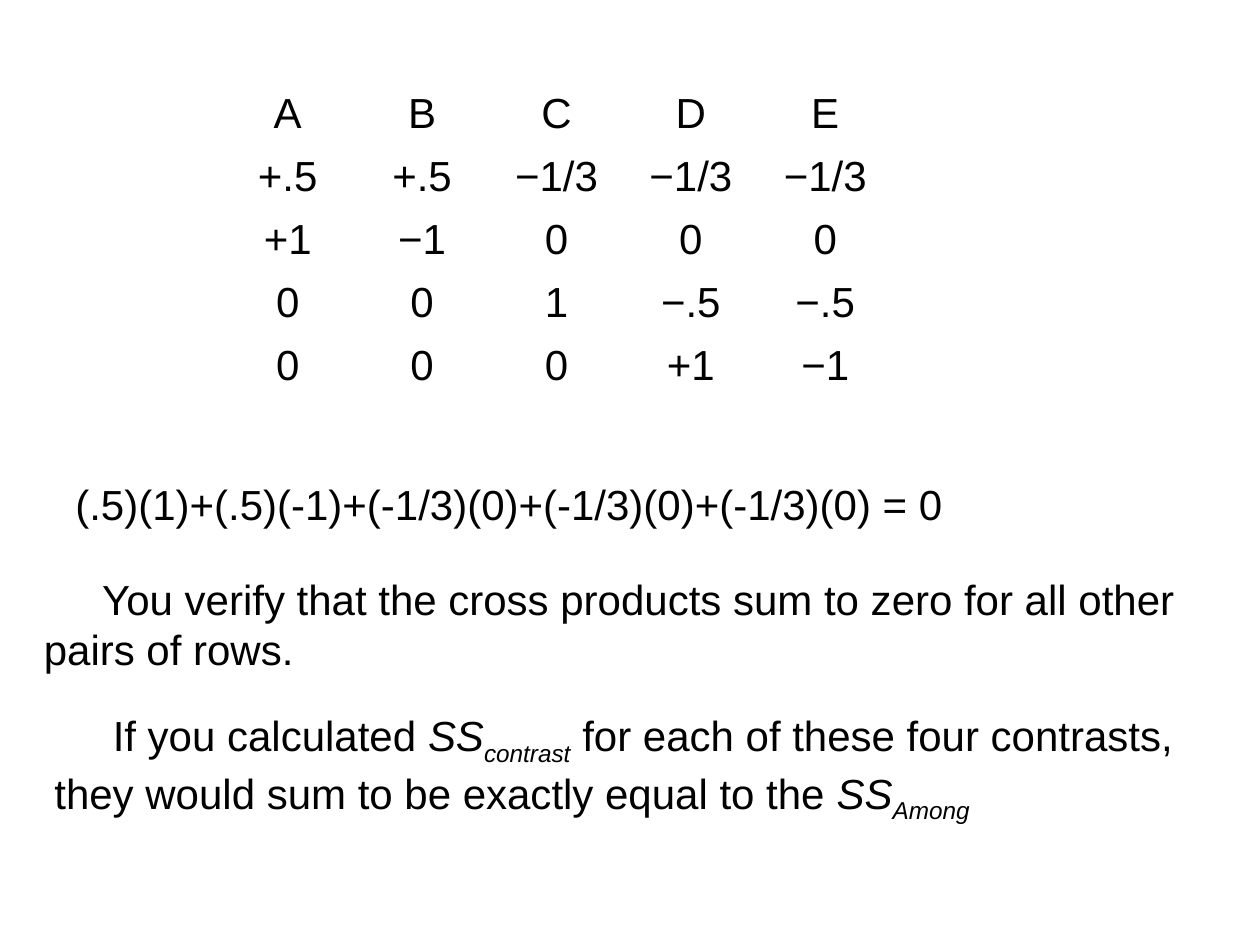
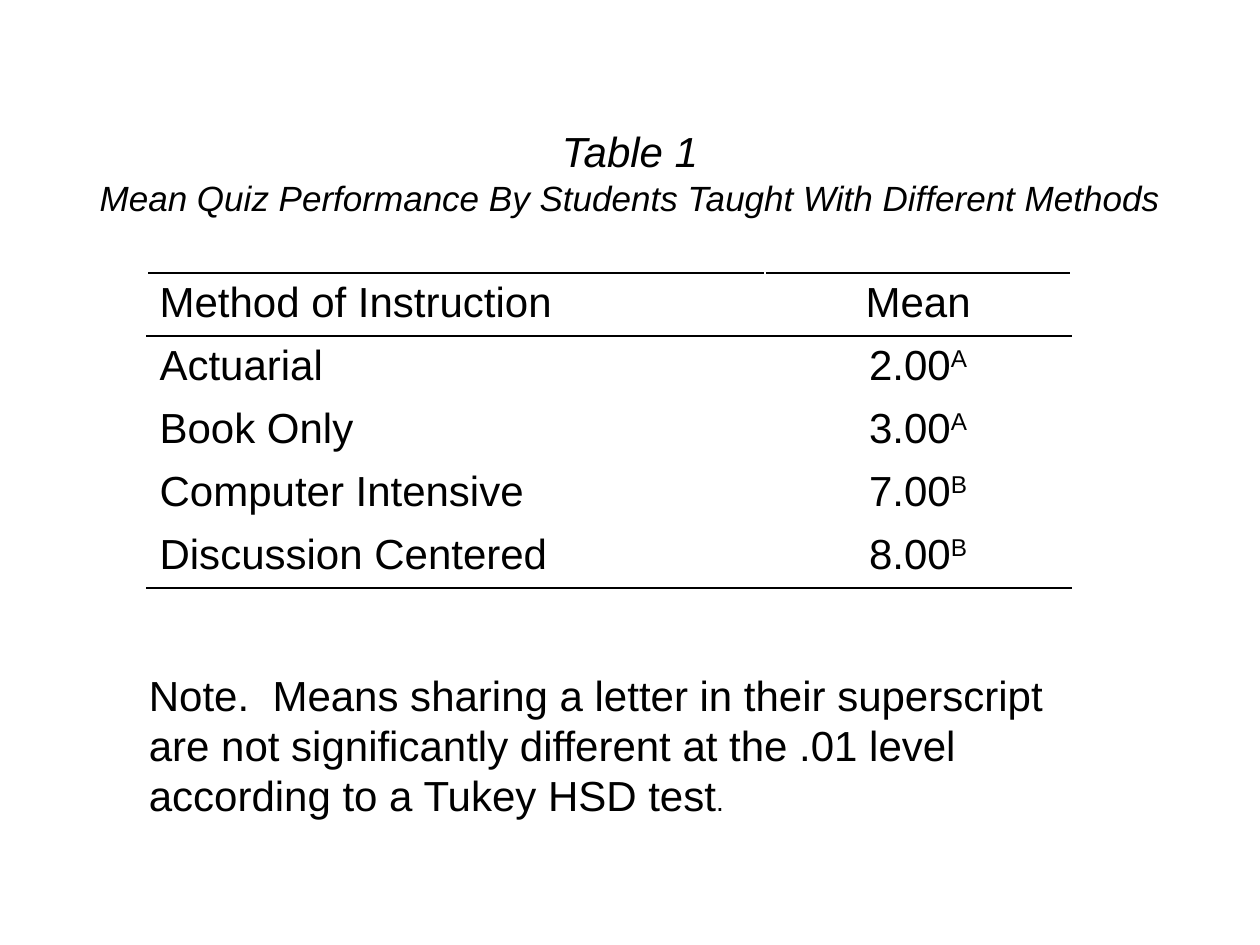
from lxml import etree
from pptx import Presentation
from pptx.dml.color import RGBColor
from pptx.enum.text import PP_ALIGN
from pptx.oxml.ns import qn
from pptx.util import Pt

LEFT, CENTER = PP_ALIGN.LEFT, PP_ALIGN.CENTER
FONT = "Arial"
BLACK = "000000"
BODY = 24
ROW_HEIGHT = 36
FIRST_LINE_INDENT = 33.35
SUBSCRIPT, SUPERSCRIPT = -25, 30


def color(value):
    return RGBColor.from_string(value)


def add_run(p, text, italic=None, size=None, baseline=None):
    r = p.add_run()
    r.text = text
    r.font.italic = italic
    if size:
        r.font.size = Pt(size)
    if baseline:
        r.font._element.set("baseline", str(baseline * 1000))


def write(p, runs, align=LEFT, size=BODY, italic=None, indent=0):
    p.alignment = align
    p.font.name = FONT
    p.font.size = Pt(size)
    p.font.italic = italic
    p.font.color.rgb = color(BLACK)
    if indent:
        p._p.get_or_add_pPr().set("indent", str(Pt(indent)))
    for text, style in runs:
        add_run(p, text, **style)


def add_text(s, left, top, width, height, wrap=True, margin_top=3.6):
    tf = s.shapes.add_textbox(Pt(left), Pt(top), Pt(width), Pt(height)).text_frame
    tf.word_wrap = wrap
    tf.margin_top = Pt(margin_top)
    return tf


def add_border(cell, side):
    ln = etree.SubElement(cell._tc.get_or_add_tcPr(), qn(f"a:ln{side}"), w=str(Pt(1)))
    fill = etree.SubElement(ln, qn("a:solidFill"))
    etree.SubElement(fill, qn("a:srgbClr"), val=BLACK)


def add_grid(s, left, top, widths, rows, aligns, borders):
    frame = s.shapes.add_table(len(rows), len(widths), Pt(left), Pt(top),
                               Pt(sum(widths)), Pt(ROW_HEIGHT * len(rows)))
    table = frame.table
    table.first_row = table.horz_banding = False
    for column, width in zip(table.columns, widths):
        column.width = Pt(width)
    for i, row in enumerate(rows):
        table.rows[i].height = Pt(ROW_HEIGHT)
        for j, runs in enumerate(row):
            cell = table.cell(i, j)
            for side in borders.get(i, ""):
                add_border(cell, side)
            cell.fill.background()
            write(cell.text_frame.paragraphs[0], runs, aligns[j])


def plain(text):
    return [(text, {})]


def sum_of_squares(name):
    return [("SS", {"italic": True}),
            (name, {"italic": True, "baseline": SUBSCRIPT})]


def build_contrasts(s):
    contrasts = ["A B C D E",
                 "+.5 +.5 −1/3 −1/3 −1/3",
                 "+1 −1 0 0 0",
                 "0 0 1 −.5 −.5",
                 "0 0 0 +1 −1"]
    rows = [[plain(value) for value in line.split()] for line in contrasts]
    add_grid(s, 126, 48, [76.8] * 5, rows, [CENTER] * 5, {})

    tf = add_text(s, 36, 270, 654, 36)
    write(tf.paragraphs[0],
          plain("(.5)(1)+(.5)(-1)+(-1/3)(0)+(-1/3)(0)+(-1/3)(0) = 0"))
    tf = add_text(s, 18, 324, 684, 65)
    write(tf.paragraphs[0],
          plain("You verify that the cross products sum to zero for all other pairs of rows."),
          indent=FIRST_LINE_INDENT)
    tf = add_text(s, 24, 402, 696, 65)
    write(tf.paragraphs[0],
          plain("If you calculated ") + sum_of_squares("contrast")
          + plain(" for each of these four contrasts, they would sum to be exactly equal to the ")
          + sum_of_squares("Among"),
          indent=FIRST_LINE_INDENT)


def build_means(s):
    tf = add_text(s, 49.7, 68.4, 620.6, 60, wrap=False)
    write(tf.paragraphs[0], plain("Table 1"), CENTER, italic=True)
    write(tf.add_paragraph(),
          plain("Mean Quiz Performance By Students Taught With Different Methods"),
          CENTER, size=20, italic=True)

    means = [("Actuarial", "2.00", "A"),
             ("Book Only", "3.00", "A"),
             ("Computer Intensive", "7.00", "B"),
             ("Discussion Centered", "8.00", "B")]
    rows = [[plain("Method of Instruction"), plain("Mean")]]
    rows += [[plain(method), [(mean, {}), (group, {"baseline": SUPERSCRIPT})]]
             for method, mean, group in means]
    add_grid(s, 84, 156, [353.3, 174.7], rows, [LEFT, CENTER],
             {0: "TB", 1: "T", len(means): "B"})

    tf = add_text(s, 78, 375.8, 534, 116.6, margin_top=6.5)
    write(tf.paragraphs[0],
          plain("Note.  Means sharing a letter in their superscript are not significantly "
                "different at the .01 level according to a Tukey HSD test")
          + [(".", {"size": 16})])


def main():
    prs = Presentation()
    prs.slide_width, prs.slide_height = Pt(720), Pt(540)
    for build in (build_contrasts, build_means):
        build(prs.slides.add_slide(prs.slide_layouts[6]))
    prs.save("out.pptx")


if __name__ == "__main__":
    main()
